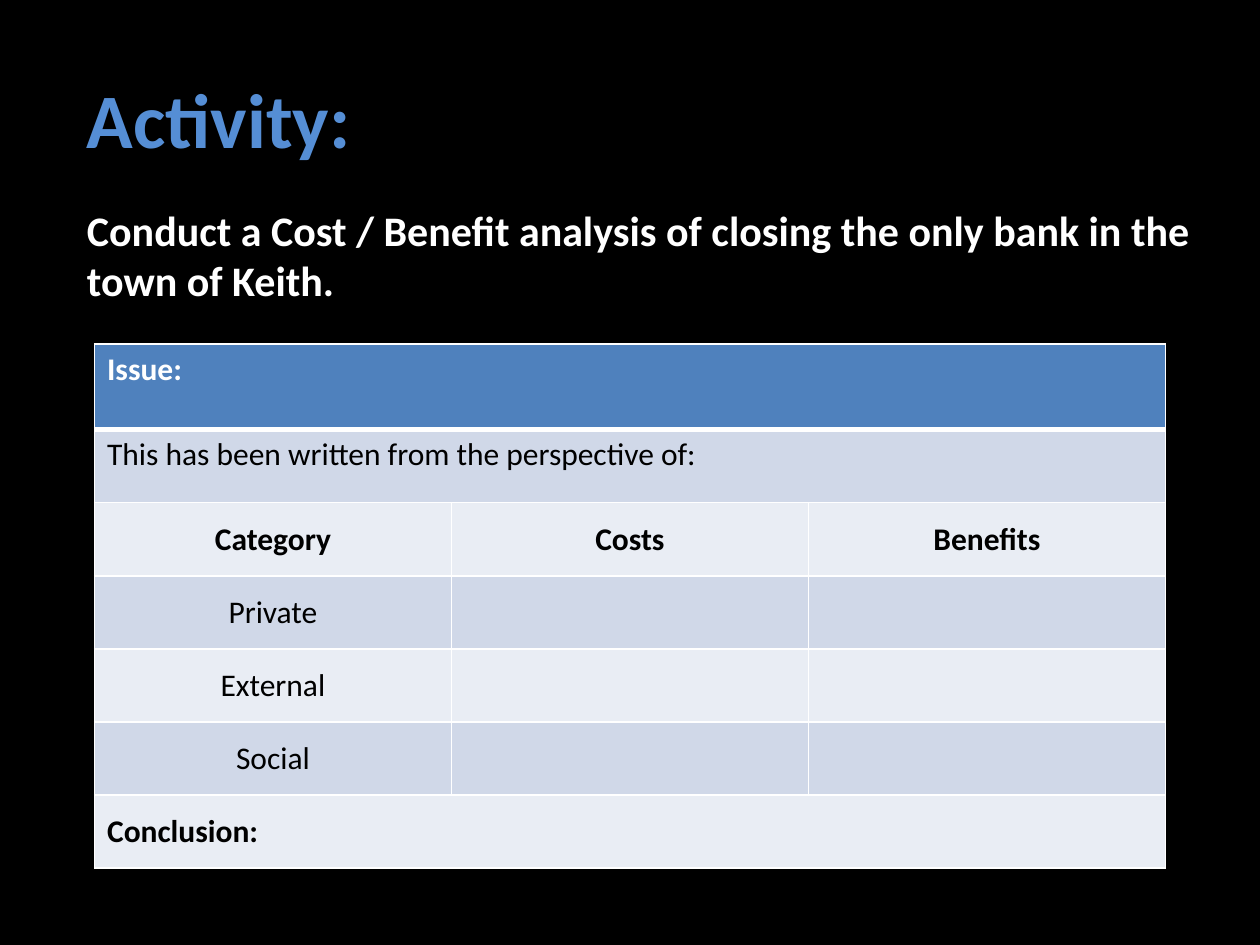
from lxml.etree import SubElement
from pptx import Presentation
from pptx.dml.color import RGBColor
from pptx.enum.text import MSO_ANCHOR, MSO_AUTO_SIZE, PP_ALIGN
from pptx.oxml.ns import qn
from pptx.util import Inches, Pt

# Content
TITLE = "Activity:"
TASK = ("Conduct a Cost / Benefit analysis of closing the only bank "
        "in the town of Keith.")
# One text means the row is a single merged cell
ROWS = [
    ["Issue:"],
    ["This has been written from the perspective of:"],
    ["Category", "Costs", "Benefits"],
    ["Private", "", ""],
    ["External", "", ""],
    ["Social", "", ""],
    ["Conclusion:"],
]
BOLD_ROWS = {0, 2, 6}
COLS = 3
HEADER_FILL, BANDS = "4F81BD", ("E9EDF4", "D0D8E8")
HEADER_H, ROW_H = 0.68, 0.58
WHITE, BLACK = "FFFFFF", "000000"


def rgb(value):
    return RGBColor.from_string(value)


def write(tf, text, size, color, bold=True, align=PP_ALIGN.LEFT):
    p = tf.paragraphs[0]
    p.alignment = align
    p.space_before = Pt(0)
    r = p.add_run()
    r.text = text
    for key, value in dict(name="Calibri", size=Pt(size), bold=bold).items():
        setattr(r.font, key, value)
    r.font.color.rgb = rgb(color)
    return p


def place(sp, left, top, width, height):
    sp.left, sp.top = Inches(left), Inches(top)
    sp.width, sp.height = Inches(width), Inches(height)
    tf = sp.text_frame
    tf.word_wrap = True
    tf.auto_size = MSO_AUTO_SIZE.NONE
    tf.vertical_anchor = MSO_ANCHOR.TOP
    return tf


def set_borders(cell, widths):
    tcPr = cell._tc.get_or_add_tcPr()
    for side, width in zip("LRTB", widths):
        ln = SubElement(tcPr, qn(f"a:ln{side}"), w=str(Pt(width)))
        fill = SubElement(ln, qn("a:solidFill"))
        SubElement(fill, qn("a:srgbClr"), val=WHITE)


# Slide
prs = Presentation()
prs.slide_width, prs.slide_height = Inches(10), Inches(7.5)
s = prs.slides.add_slide(prs.slide_layouts[1])
s.background.fill.solid()
s.background.fill.fore_color.rgb = rgb(BLACK)

# Title and task
write(place(s.shapes.title, 0.59, 0.52, 8.98, 0.9), TITLE, 44, "558ED5")
p = write(place(s.placeholders[1], 0.59, 1.57, 8.98, 0.95), TASK, 24, WHITE)
pPr = p._p.get_or_add_pPr()
pPr.set("marL", "0")
pPr.set("indent", "0")
SubElement(pPr, qn("a:buNone"))

# Cost / benefit table
height = HEADER_H + ROW_H * (len(ROWS) - 1)
table = s.shapes.add_table(len(ROWS), COLS, Inches(0.75), Inches(2.73),
                           Inches(8.5), Inches(height)).table
for i, texts in enumerate(ROWS):
    table.rows[i].height = Inches(ROW_H if i else HEADER_H)
    merged = len(texts) == 1
    if merged:
        table.cell(i, 0).merge(table.cell(i, COLS - 1))
    for j in range(COLS):
        cell = table.cell(i, j)
        set_borders(cell, (1, 1, 3 if i == 1 else 1, 1 if i else 3))
        cell.fill.solid()
        cell.fill.fore_color.rgb = rgb(BANDS[i % 2] if i else HEADER_FILL)
        cell.vertical_anchor = MSO_ANCHOR.TOP if i < 2 else MSO_ANCHOR.MIDDLE
        if j < len(texts) and texts[j]:
            write(cell.text_frame, texts[j], 18, BLACK if i else WHITE,
                  i in BOLD_ROWS, PP_ALIGN.LEFT if merged else PP_ALIGN.CENTER)

prs.save("out.pptx")
